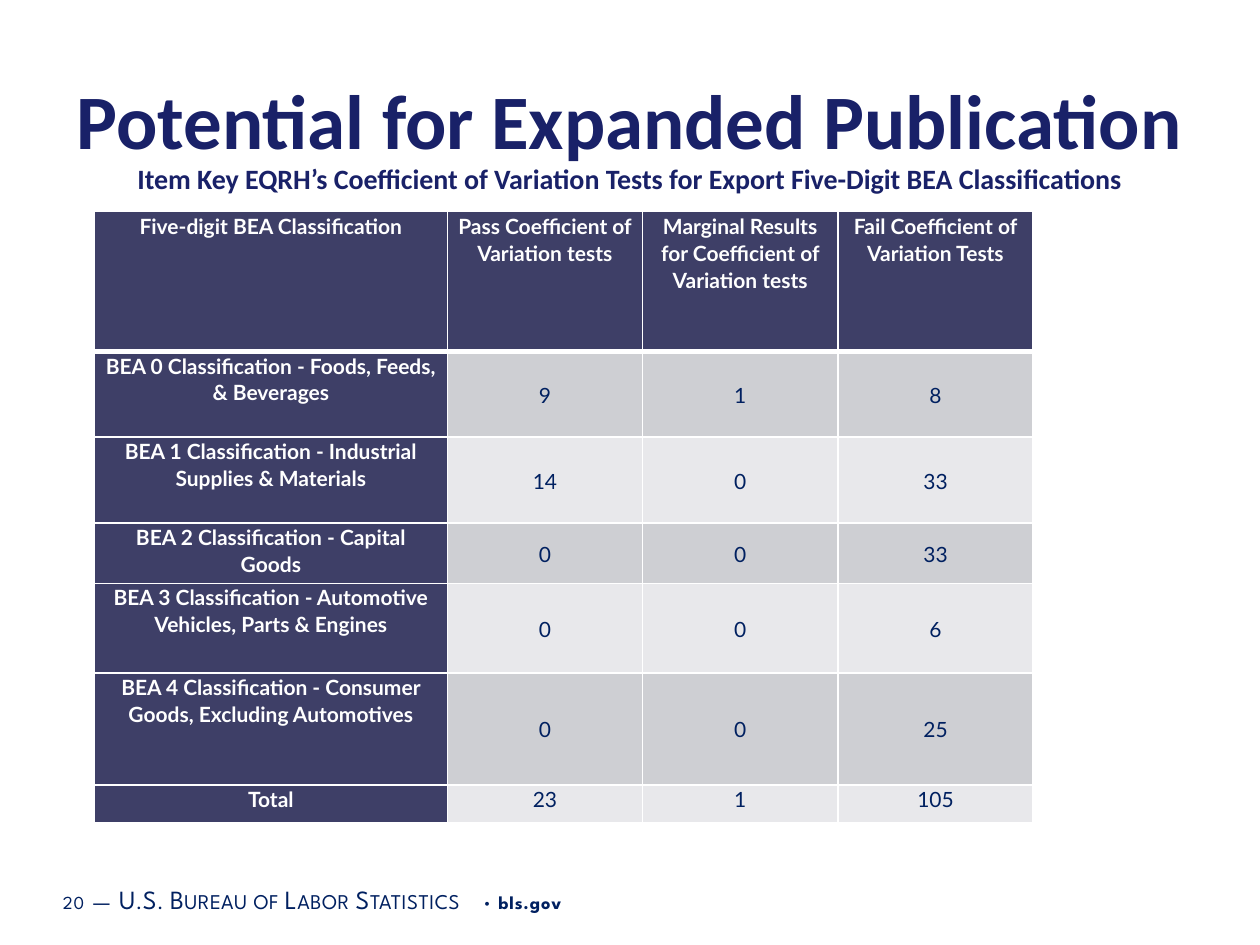
from lxml import etree
from pptx import Presentation
from pptx.dml.color import RGBColor
from pptx.enum.text import MSO_ANCHOR, PP_ALIGN
from pptx.oxml.ns import qn
from pptx.util import Inches, Pt

CENTER = PP_ALIGN.CENTER
LEFT = PP_ALIGN.LEFT
TOP = MSO_ANCHOR.TOP
MIDDLE = MSO_ANCHOR.MIDDLE

NAVY = "192168"
BLUE = "002060"
WHITE = "FFFFFF"
HEADER_FILL = "3E3F67"
BAND_FILLS = ("CECFD3", "E8E8EB")

COLUMN_WIDTHS = (2.8, 1.55, 1.55, 1.55)
ROW_HEIGHTS = (1.11, 0.68, 0.68, 0.48, 0.71, 0.89, 0.3)
ROWS = (
    ("Five-digit BEA Classification", "Pass Coefficient of Variation tests",
     "Marginal Results for Coefficient of Variation tests",
     "Fail Coefficient of Variation Tests"),
    ("BEA 0 Classification - Foods, Feeds, & Beverages", "9", "1", "8"),
    ("BEA 1 Classification - Industrial Supplies & Materials", "14", "0", "33"),
    ("BEA 2 Classification - Capital Goods", "0", "0", "33"),
    ("BEA 3 Classification - Automotive Vehicles, Parts & Engines", "0", "0", "6"),
    ("BEA 4 Classification - Consumer Goods, Excluding Automotives", "0", "0", "25"),
    ("Total", "23", "1", "105"),
)


def color(value):
    return RGBColor.from_string(value)


def add_text(paragraph, text, font="Calibri", size=12, fill=NAVY, bold=False,
             spacing=0, small_caps=False):
    run = paragraph.add_run()
    run.text = text
    run.font.name = font
    run.font.size = Pt(size)
    run.font.bold = bold
    run.font.color.rgb = color(fill)
    properties = run.font._element
    if spacing:
        properties.set("spc", str(round(spacing * 100)))
    if small_caps:
        properties.set("cap", "small")


def add_text_box(slide, left, top, width, height, anchor=TOP, align=CENTER,
                 margins=(0.1, 0.05)):
    shape = slide.shapes.add_textbox(
        Inches(left), Inches(top), Inches(width), Inches(height))
    frame = shape.text_frame
    frame.word_wrap = True
    frame.vertical_anchor = anchor
    frame.margin_left = frame.margin_right = Inches(margins[0])
    frame.margin_top = frame.margin_bottom = Inches(margins[1])
    paragraph = frame.paragraphs[0]
    paragraph.alignment = align
    return paragraph


def add_heading(slide, left, top, width):
    title = add_text_box(slide, left, top, width, 0.88, anchor=MIDDLE)
    add_text(title, "Potential for Expanded Publication", size=44, bold=True)
    subtitle = add_text_box(slide, left, top + 0.73, width, 0.4)
    add_text(subtitle, "Item Key EQRH’s Coefficient of Variation Tests for Export "
             "Five-Digit BEA Classifications", size=16, bold=True)


def set_borders(cell, bottom_width):
    properties = cell._tc.get_or_add_tcPr()
    widths = (("a:lnL", 1), ("a:lnR", 1), ("a:lnT", 1), ("a:lnB", bottom_width))
    for index, (tag, width) in enumerate(widths):
        line = etree.Element(qn(tag), w=str(Pt(width)))
        solid = etree.SubElement(line, qn("a:solidFill"))
        etree.SubElement(solid, qn("a:srgbClr"), val=WHITE)
        properties.insert(index, line)


def format_cell(cell, text, row, column):
    is_header = row == 0 or column == 0
    is_total = row == len(ROWS) - 1
    cell.fill.solid()
    cell.fill.fore_color.rgb = color(
        HEADER_FILL if is_header else BAND_FILLS[(row - 1) % 2])
    cell.margin_left = cell.margin_right = Inches(0.07)
    cell.margin_top = cell.margin_bottom = 0
    cell.vertical_anchor = TOP if is_header or is_total else MIDDLE
    paragraph = cell.text_frame.paragraphs[0]
    paragraph.alignment = CENTER
    paragraph.line_spacing = 1.07
    add_text(paragraph, text, font="Lato", bold=is_header,
             fill=WHITE if is_header else BLUE)
    set_borders(cell, 3 if row == 0 else 1)


def add_results_table(slide, left, top):
    table = slide.shapes.add_table(
        len(ROWS), len(COLUMN_WIDTHS), Inches(left), Inches(top),
        Inches(sum(COLUMN_WIDTHS)), Inches(sum(ROW_HEIGHTS))).table
    for column, width in zip(table.columns, COLUMN_WIDTHS):
        column.width = Inches(width)
    for row, height in zip(table.rows, ROW_HEIGHTS):
        row.height = Inches(height)
    for row, texts in enumerate(ROWS):
        for column, text in enumerate(texts):
            format_cell(table.cell(row, column), text, row, column)


def add_footer(slide, left, top, width, height):
    paragraph = add_text_box(slide, left, top, width, height, anchor=MIDDLE,
                             align=LEFT, margins=(0.07, 0.04))
    plain = {"size": 10.5, "spacing": 0.5}
    gap = {"size": 16, "spacing": 0.5}
    agency = {"size": 15, "spacing": 0.3, "small_caps": True}
    parts = (
        ("20", plain),
        (" ", gap),
        ("—", agency),
        (" ", gap),
        ("U.S. Bureau of Labor Statistics", agency),
        (" • ", plain),
        ("bls.gov", {**plain, "bold": True}),
    )
    for text, style in parts:
        add_text(paragraph, text, font="League Spartan", fill=BLUE, **style)


def main():
    presentation = Presentation()
    presentation.slide_width = Inches(10)
    presentation.slide_height = Inches(7.5)
    slide = presentation.slides.add_slide(presentation.slide_layouts[6])
    add_footer(slide, 0.43, 6.93, 6.33, 0.4)
    add_heading(slide, 0.5, 0.5, 9)
    add_results_table(slide, 0.75, 1.68)
    presentation.save("out.pptx")


if __name__ == "__main__":
    main()
